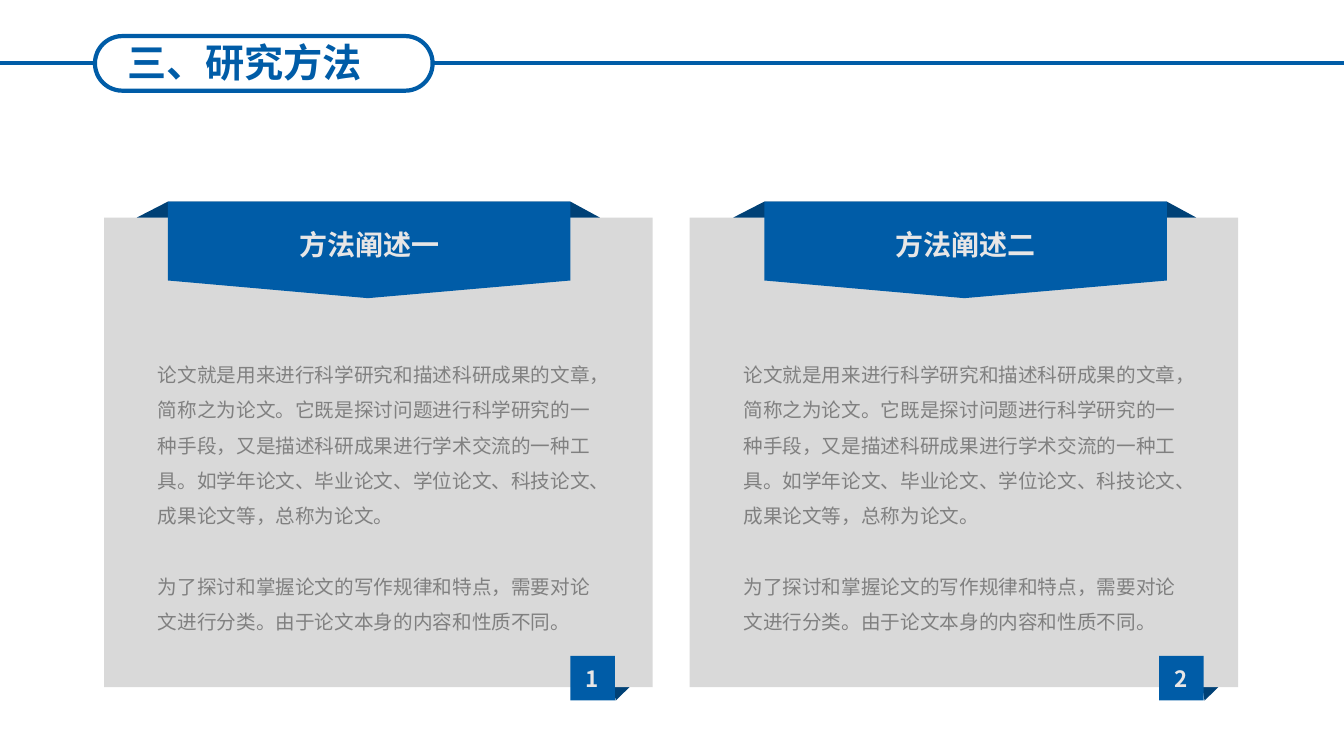
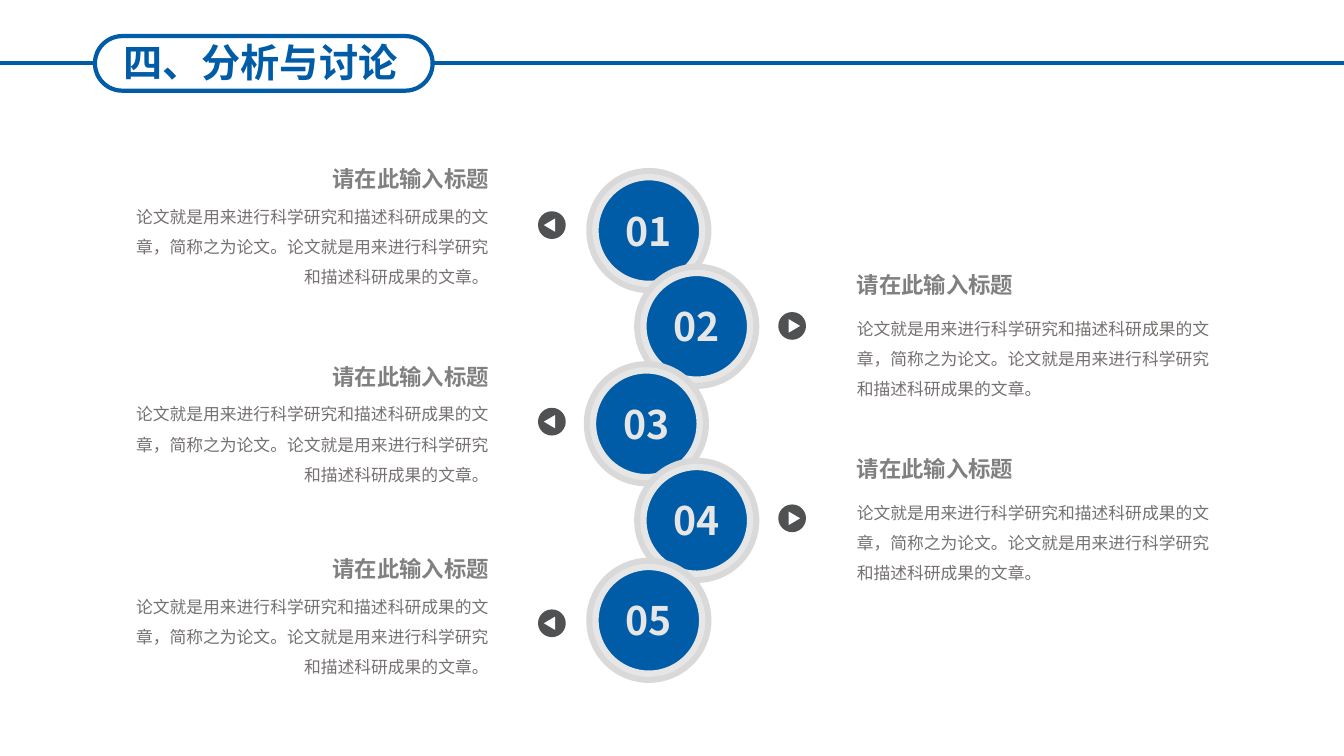
from lxml.etree import SubElement
from pptx import Presentation
from pptx.dml.color import RGBColor
from pptx.enum.shapes import MSO_CONNECTOR, MSO_SHAPE
from pptx.enum.text import MSO_ANCHOR, MSO_AUTO_SIZE, PP_ALIGN
from pptx.oxml.ns import qn
from pptx.util import Inches, Pt

# The slide is a grid of 160 columns by 90 rows of square cells
COLUMNS, ROWS = 160, 90
CELL = Inches(1) // 12
FONT = "Noto Sans CJK SC"
BLUE, NAVY, WHITE = "005CA7", "004176", "FFFFFF"
CARD_GREY, PALE, TEXT_GREY, NOTE_GREY, DARK = "D9D9D9", "E7E6E6", "808080", "767171", "505153"
rgb = RGBColor.from_string


def add(slide, kind, cells, fill=None, line=None, width=0):
    """Add a preset shape, a text box (kind None) or a "polygon"; cells is a box or the corners."""
    if kind == "polygon":
        corners = [(x * CELL, y * CELL) for x, y in cells]
        builder = slide.shapes.build_freeform(*corners[0])
        builder.add_line_segments(corners[1:])
        shape = builder.convert_to_shape()
    else:
        box = [round(n * CELL) for n in cells]
        if kind is None:
            return slide.shapes.add_textbox(*box)
        shape = slide.shapes.add_shape(kind, *box)
    shape.shadow.inherit = False
    if fill:
        shape.fill.solid()
        shape.fill.fore_color.rgb = rgb(fill)
    else:
        shape.fill.background()
    if line:
        shape.line.color.rgb = rgb(line)
        shape.line.width = Pt(width)
    else:
        shape.line.fill.background()
    return shape


def write(shape, text, size, colour, bold=True, align=PP_ALIGN.CENTER,
          anchor=MSO_ANCHOR.MIDDLE, pitch=1.2):
    """Fill a shape with paragraphs, one per line of text, a line's height apart."""
    frame = shape.text_frame
    frame_format = {"word_wrap": True, "auto_size": MSO_AUTO_SIZE.NONE, "vertical_anchor": anchor,
                    "margin_left": 0, "margin_right": 0, "margin_top": 0, "margin_bottom": 0}
    for name, value in frame_format.items():
        setattr(frame, name, value)
    for index, words in enumerate(text.split("\n")):
        paragraph = frame.add_paragraph() if index else frame.paragraphs[0]
        paragraph.alignment = align
        paragraph.line_spacing = Pt(size * pitch)
        if index:
            paragraph.space_before = Pt(size * pitch)
        run = paragraph.add_run()
        run.text = words
        for name, value in {"name": FONT, "size": Pt(size), "bold": bold}.items():
            setattr(run.font, name, value)
        run.font.color.rgb = rgb(colour)
        SubElement(run._r.get_or_add_rPr(), qn("a:ea")).set("typeface", FONT)


prs = Presentation()
prs.slide_width, prs.slide_height = COLUMNS * CELL, ROWS * CELL

# Title band of both slides: a pill on a line across the slide
PILL_LEFT, PILL_WIDTH, BAND_ROW = 11.3, 40.2, 7.5
slides = []
for heading, heading_left in [("三、研究方法", 8.8), ("四、分析与讨论", 10.7)]:
    slide = prs.slides.add_slide(prs.slide_layouts[5])
    slides.append(slide)
    title = slide.shapes.title
    for name, cells in {"left": heading_left, "top": 4, "width": 40.6, "height": 6.8}.items():
        setattr(title, name, round(cells * CELL))
    write(title, heading, 28, BLUE)
    for start, end in [(0, PILL_LEFT), (PILL_LEFT + PILL_WIDTH, COLUMNS)]:
        row = round(BAND_ROW * CELL)
        band = slide.shapes.add_connector(
            MSO_CONNECTOR.STRAIGHT, round(start * CELL), row, round(end * CELL), row)
        band.line.color.rgb = rgb(BLUE)
        band.line.width = Pt(3)
        SubElement(band._element.spPr, qn("a:effectLst"))
    pill = add(slide, MSO_SHAPE.ROUNDED_RECTANGLE, (PILL_LEFT, 4.3, PILL_WIDTH, 6.5),
               line=BLUE, width=3)
    pill.adjustments[0] = 0.5

methods_slide, analysis_slide = slides

# Methods: two cards, each with a ribbon and a numbered badge
METHOD_TEXT = (
    "论文就是用来进行科学研究和描述科研成果的文章，简称之为论文。它既是探讨问题进行科学研究的一种手段，"
    "又是描述科研成果进行学术交流的一种工具。如学年论文、毕业论文、学位论文、科技论文、成果论文等，总称为论文。\n"
    "为了探讨和掌握论文的写作规律和特点，需要对论文进行分类。由于论文本身的内容和性质不同。")
CARD_TOP, RIBBON_TOP, RIBBON_WIDTH, BADGE_TOP, BADGE = 25.9, 24, 47.9, 78.1, 5.3
methods = [("1", "方法阐述一", 12.4, 20, 67.9), ("2", "方法阐述二", 82.1, 91, 138)]
for number, name, card_left, ribbon_left, badge_left in methods:
    ribbon_right = ribbon_left + RIBBON_WIDTH
    add(methods_slide, "polygon",
        [(badge_left + 9.1, BADGE_TOP + 1.7), (badge_left + 5.4, BADGE_TOP + BADGE),
         (badge_left + 4.7, BADGE_TOP + 1.1)], NAVY)
    add(methods_slide, MSO_SHAPE.RECTANGLE, (card_left, CARD_TOP, 65.3, 55.9), CARD_GREY)
    add(methods_slide, "polygon",
        [(ribbon_left, RIBBON_TOP), (ribbon_right, RIBBON_TOP),
         (ribbon_right + 3.5, CARD_TOP), (ribbon_left - 3.7, CARD_TOP)], NAVY)
    ribbon = add(methods_slide, "polygon",
                 [(ribbon_left, RIBBON_TOP), (ribbon_right, RIBBON_TOP), (ribbon_right, 33.4),
                  (ribbon_left + 23.8, 35.5), (ribbon_left, 33.4)], BLUE)
    write(ribbon, name, 20, PALE)
    ribbon.text_frame.margin_bottom = round(1.4 * CELL)
    method_note = add(methods_slide, None, (card_left + 6.4, 41.8, 52.4, 34))
    write(method_note, METHOD_TEXT, 14, TEXT_GREY, False, PP_ALIGN.LEFT, MSO_ANCHOR.TOP, 1.8)
    badge = add(methods_slide, MSO_SHAPE.RECTANGLE, (badge_left, BADGE_TOP, BADGE, BADGE), BLUE)
    write(badge, number, 16, PALE)

# Analysis: a chain of numbered discs, each pointing to its note
NOTE_TEXT = "论文就是用来进行科学研究和描述科研成果的文章，简称之为论文。论文就是用来进行科学研究和描述科研成果的文章。"
RING, RIM, POINTER, NOTE_WIDTH = 14.9, 1.1, 3.3, 43.4
# direction: (note column, pointer centre, gap from heading to note, alignment)
sides = {-1: (14.8, 65.7, 3.7, PP_ALIGN.RIGHT), 1: (102, 94.3, 4.4, PP_ALIGN.LEFT)}
# direction, ring left, ring top, pointer row, heading row
steps = [(-1, 69.8, 20, 26.8, 19.7), (1, 75.5, 31.4, 38.8, 32.3), (-1, 69.5, 43, 50.2, 43.2),
         (1, 75.5, 54.5, 61.7, 54.2), (-1, 69.8, 66.4, 74.2, 66.1)]
for number, (direction, ring_left, ring_top, pointer_row, heading_row) in enumerate(steps, 1):
    note_left, pointer_column, heading_gap, align = sides[direction]
    add(analysis_slide, MSO_SHAPE.OVAL, (ring_left, ring_top, RING, RING), CARD_GREY)
    disc = add(analysis_slide, MSO_SHAPE.OVAL,
               (ring_left + RIM, ring_top + RIM, RING - 2 * RIM, RING - 2 * RIM), BLUE, PALE, 4.5)
    write(disc, f"{number:02}", 28, PALE)
    add(analysis_slide, MSO_SHAPE.OVAL,
        (pointer_column - POINTER / 2, pointer_row - POINTER / 2, POINTER, POINTER), DARK)
    base = pointer_column - 0.4 * direction
    add(analysis_slide, "polygon",
        [(pointer_column + 0.95 * direction, pointer_row),
         (base, pointer_row - 0.8), (base, pointer_row + 0.8)], WHITE)
    note_heading = add(analysis_slide, None, (note_left, heading_row, NOTE_WIDTH, 3.2))
    write(note_heading, "请在此输入标题", 16, TEXT_GREY, True, align, MSO_ANCHOR.TOP)
    note = add(analysis_slide, None, (note_left, heading_row + heading_gap, NOTE_WIDTH, 11))
    write(note, NOTE_TEXT, 12, NOTE_GREY, False, align, MSO_ANCHOR.TOP, 1.8)

prs.save("out.pptx")
